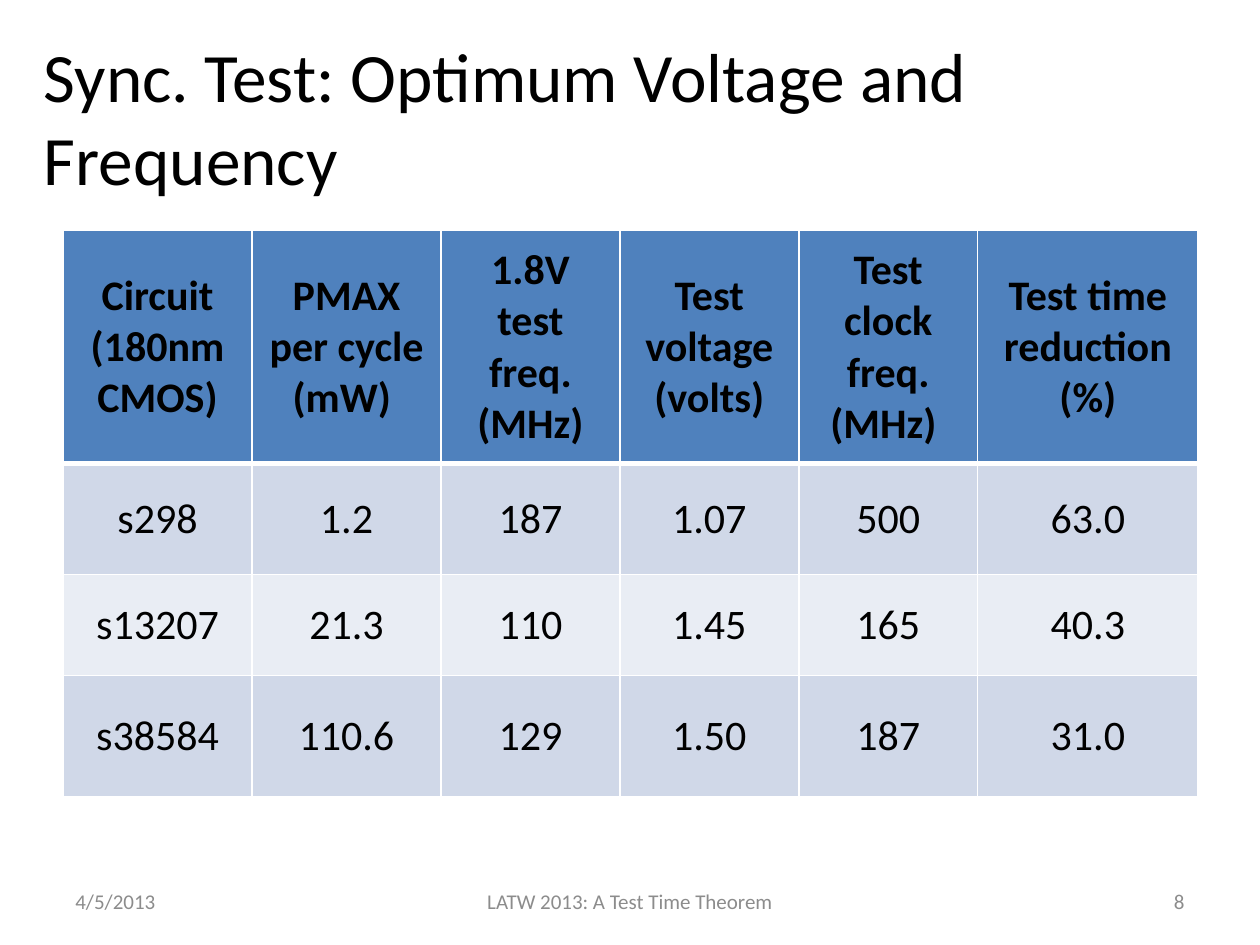
"""Build a slide with a table of optimum test voltage and frequency."""
from dataclasses import dataclass

from lxml import etree
from pptx import Presentation
from pptx import util as u
from pptx.dml.color import RGBColor
from pptx.enum import text
from pptx.oxml import ns

WIDE, HIGH = u.Inches(10), u.Inches(7.5)
FONT = "Calibri"
HUES = {"ink": "000000", "gray": "8C8C8C", "head": "4F81BD",
        "odd": "D0D8E8", "even": "E9EDF4", "rule": "FFFFFF"}
ALIGN = text.PP_ALIGN
COLS = (1.5, 1.5, 1.42, 1.42, 1.42, 1.75)
ROWS = (1.85, 0.88, 0.8, 0.96)
DATA = (
    ("Circuit (180nm CMOS)", "PMAX per cycle (mW) ", "1.8V test freq. (MHz)",
     "Test voltage (volts)", "Test clock freq. (MHz) ", "Test time reduction (%)"),
    ("s298", "1.2", "187", "1.07", "500", "63.0"),
    ("s13207", "21.3", "110", "1.45", "165", "40.3"),
    ("s38584", "110.6", "129", "1.50", "187", "31.0"),
)


@dataclass(frozen=True)
class Label:
    """Text with its box in shares of the slide."""
    words: str
    left: float
    top: float
    wide: float
    high: float
    size: float = 12
    hue: str = "gray"
    align: ALIGN = ALIGN.LEFT


FOOT = {"top": 6.95 / 7.5, "high": 0.4 / 7.5}
LABELS = (
    Label("Sync. Test: Optimum Voltage and Frequency",
          0.025, 0.04, 0.95, 1 / 6, 39.6, "ink"),
    Label("4/5/2013", left=0.05, wide=0.23, **FOOT),
    Label("LATW 2013: A Test Time Theorem", left=0.34, wide=0.32,
          align=ALIGN.CENTER, **FOOT),
    Label("8", left=0.72, wide=0.23, align=ALIGN.RIGHT, **FOOT),
)


def style(frame, size: float, hue: str, align: ALIGN, bold: bool = False) -> None:
    """Format every run of a text frame."""
    for para in frame.paragraphs:
        para.alignment = align
        for run in para.runs:
            font = run.font
            font.name, font.size, font.bold = FONT, u.Pt(size), bold
            font.color.rgb = RGBColor.from_string(HUES[hue])


def write(slide, label: Label) -> None:
    """Draw one label."""
    box = slide.shapes.add_textbox(
        int(WIDE * label.left), int(HIGH * label.top),
        int(WIDE * label.wide), int(HIGH * label.high))
    frame = box.text_frame
    frame.word_wrap = True
    frame.vertical_anchor = text.MSO_ANCHOR.MIDDLE
    frame.text = label.words
    style(frame, label.size, label.hue, label.align)


def edge(cell, side: str, width: float) -> None:
    """Add a ruled border to one side of a cell, ahead of its fill."""
    line = etree.SubElement(cell._tc.get_or_add_tcPr(), ns.qn(f"a:ln{side}"),
                            w=str(u.Pt(width)))
    fill = etree.SubElement(line, ns.qn("a:solidFill"))
    etree.SubElement(fill, ns.qn("a:srgbClr"), val=HUES["rule"])


def paint(cell, words: str, row: int) -> None:
    """Fill, rule and letter one table cell."""
    for side in "LRTB":
        thick = (row, side) in ((0, "B"), (1, "T"))
        edge(cell, side, 3 if thick else 1)
    hue = "head" if row == 0 else "odd" if row % 2 else "even"
    cell.fill.solid()
    cell.fill.fore_color.rgb = RGBColor.from_string(HUES[hue])
    cell.vertical_anchor = text.MSO_ANCHOR.MIDDLE
    cell.text_frame.text = words
    style(cell.text_frame, 24, "ink", ALIGN.CENTER, row == 0)


def grid(slide) -> None:
    """Draw the table of results."""
    table = slide.shapes.add_table(
        len(ROWS), len(COLS), int(WIDE * 0.05), int(HIGH * 0.244),
        u.Inches(sum(COLS)), u.Inches(sum(ROWS))).table
    for col, wide in zip(table.columns, COLS):
        col.width = u.Inches(wide)
    for row, high in zip(table.rows, ROWS):
        row.height = u.Inches(high)
    for r, line in enumerate(DATA):
        for c, words in enumerate(line):
            paint(table.cell(r, c), words, r)


def main() -> None:
    """Build and save the deck."""
    deck = Presentation()
    deck.slide_width, deck.slide_height = WIDE, HIGH
    slide = deck.slides.add_slide(deck.slide_layouts[6])
    title, *feet = LABELS
    write(slide, title)
    grid(slide)
    for foot in feet:
        write(slide, foot)
    deck.save("out.pptx")


if __name__ == "__main__":
    main()
